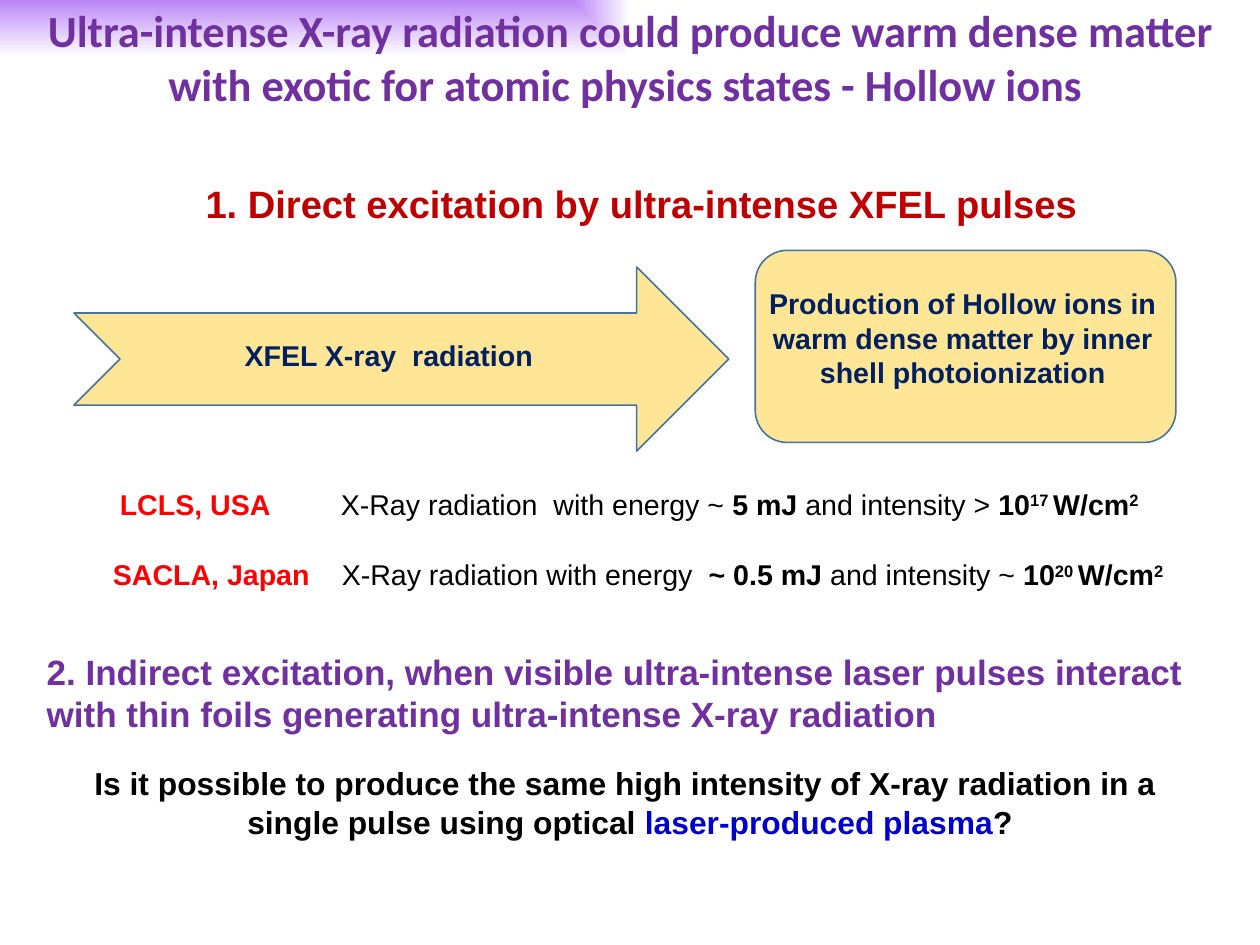
from pptx import Presentation
from pptx.util import Pt
from pptx.dml.color import RGBColor
from pptx.enum.shapes import MSO_SHAPE
from pptx.enum.text import MSO_ANCHOR, PP_ALIGN
from pptx.oxml.ns import qn
from lxml import etree

RECT = MSO_SHAPE.RECTANGLE
ROUND = MSO_SHAPE.ROUNDED_RECTANGLE
ARROW = MSO_SHAPE.NOTCHED_RIGHT_ARROW
LEFT, CENTER = PP_ALIGN.LEFT, PP_ALIGN.CENTER
TOP, MIDDLE = MSO_ANCHOR.TOP, MSO_ANCHOR.MIDDLE
PURPLE, NAVY, RED, BLACK = "7030A0", "002060", "FF0000", "000000"
WIDE, HIGH = 793.75, 595.25


def rgb(code):
    return RGBColor.from_string(code)


def write(shape, *lines, size=18, color=BLACK, font="Arial", align=LEFT, anchor=TOP, tab=None):
    frame = shape.text_frame
    frame.word_wrap = True
    frame.vertical_anchor = anchor
    for i, line in enumerate(lines):
        para = frame.add_paragraph() if i else frame.paragraphs[0]
        para.alignment = align
        if tab:
            tabs = etree.SubElement(para._p.get_or_add_pPr(), qn("a:tabLst"))
            etree.SubElement(tabs, qn("a:tab"), pos=str(Pt(tab)), algn="l")
        for part in [line] if isinstance(line, str) else line:
            words, form = (part, {}) if isinstance(part, str) else part
            run = para.add_run()
            run.text = words
            run.font.name = font
            run.font.size = Pt(size)
            run.font.bold = form.get("bold", True)
            run.font.color.rgb = rgb(form.get("color", color))
            if "sup" in form:
                run.font._element.set("baseline", "30000")


deck = Presentation()
deck.slide_width, deck.slide_height = Pt(WIDE), Pt(HIGH)
slide = deck.slides.add_slide(deck.slide_layouts[6])
shapes = slide.shapes

head = shapes.add_textbox(Pt(122.4), Pt(110.2), Pt(569), Pt(36))
write(head, "1. Direct excitation by ultra-intense XFEL pulses", size=24, color="C00000")

for kind, x, y, w, h in [
    (ARROW, 46.6, 168.2, 412.5, 116),
    (ROUND, 475.8, 157.7, 265, 121),
]:
    block = shapes.add_shape(kind, Pt(x), Pt(y), Pt(w), Pt(h))
    block.shadow.inherit = False
    block.fill.solid()
    block.fill.fore_color.rgb = rgb("FFE697")
    block.line.color.rgb = rgb("43739E")
    block.line.width = Pt(1)

for words, x, y, w, h in [
    ("XFEL X-ray  radiation", 62, 209.2, 365.8, 29),
    ("Production of Hollow ions in warm dense matter by inner shell photoionization", 475.8, 176.8, 261.4, 73),
]:
    label = shapes.add_textbox(Pt(x), Pt(y), Pt(w), Pt(h))
    write(label, words, color=NAVY, align=CENTER)

plain, sup = {"bold": False}, {"sup": True}
for site, x, y, stop, lead, power, link, grade in [
    ("LCLS, USA", 68.4, 303, 207.6, "X-Ray radiation  with energy ~ ", "5 mJ ", "and intensity > ", "17 "),
    ("SACLA, Japan", 64, 347.4, 208.2, "X-Ray radiation with energy  ", "~ 0.5 mJ ", "and intensity ~ ", "20 "),
]:
    row = shapes.add_textbox(Pt(x), Pt(y), Pt(694), Pt(29))
    write(row, [(site + "\t", {"color": RED}), (lead, plain), power, (link, plain),
                "10", (grade, sup), "W/cm", ("2", sup)], tab=stop - x)

ask = shapes.add_textbox(0, Pt(477.8), Pt(WIDE), Pt(55.5))
write(ask,
      "Is it possible to produce the same high intensity of X-ray radiation in a ",
      ["single pulse using optical ", ("laser-produced plasma", {"color": "0000CC"}), "?"],
      size=20, align=CENTER)

second = shapes.add_textbox(Pt(22.3), Pt(406), Pt(741), Pt(60.5))
write(second, "2. Indirect excitation, when visible ultra-intense laser pulses interact "
      "with thin foils generating ultra-intense X-ray radiation", size=22.1, color=PURPLE)

title = shapes.add_shape(RECT, 0, 0, Pt(WIDE), Pt(71.3))
title.shadow.inherit = False
title.line.fill.background()
title.fill.gradient()
for stop, code, place in zip(title.fill.gradient_stops, ["BB86F6", "FFFFFF"], [0, 1]):
    stop.color.rgb = rgb(code)
    stop.position = place
grad = title._element.spPr.find(qn("a:gradFill"))
grad.remove(grad.find(qn("a:lin")))
shade = etree.SubElement(grad, qn("a:path"), path="rect")
etree.SubElement(shade, qn("a:fillToRect"), r="100000", b="100000")
write(title, "Ultra-intense X-ray radiation could produce warm dense matter "
      "with exotic for atomic physics states - Hollow ions ",
      size=28, color=PURPLE, font="Calibri", align=CENTER, anchor=MIDDLE)

deck.save("out.pptx")
